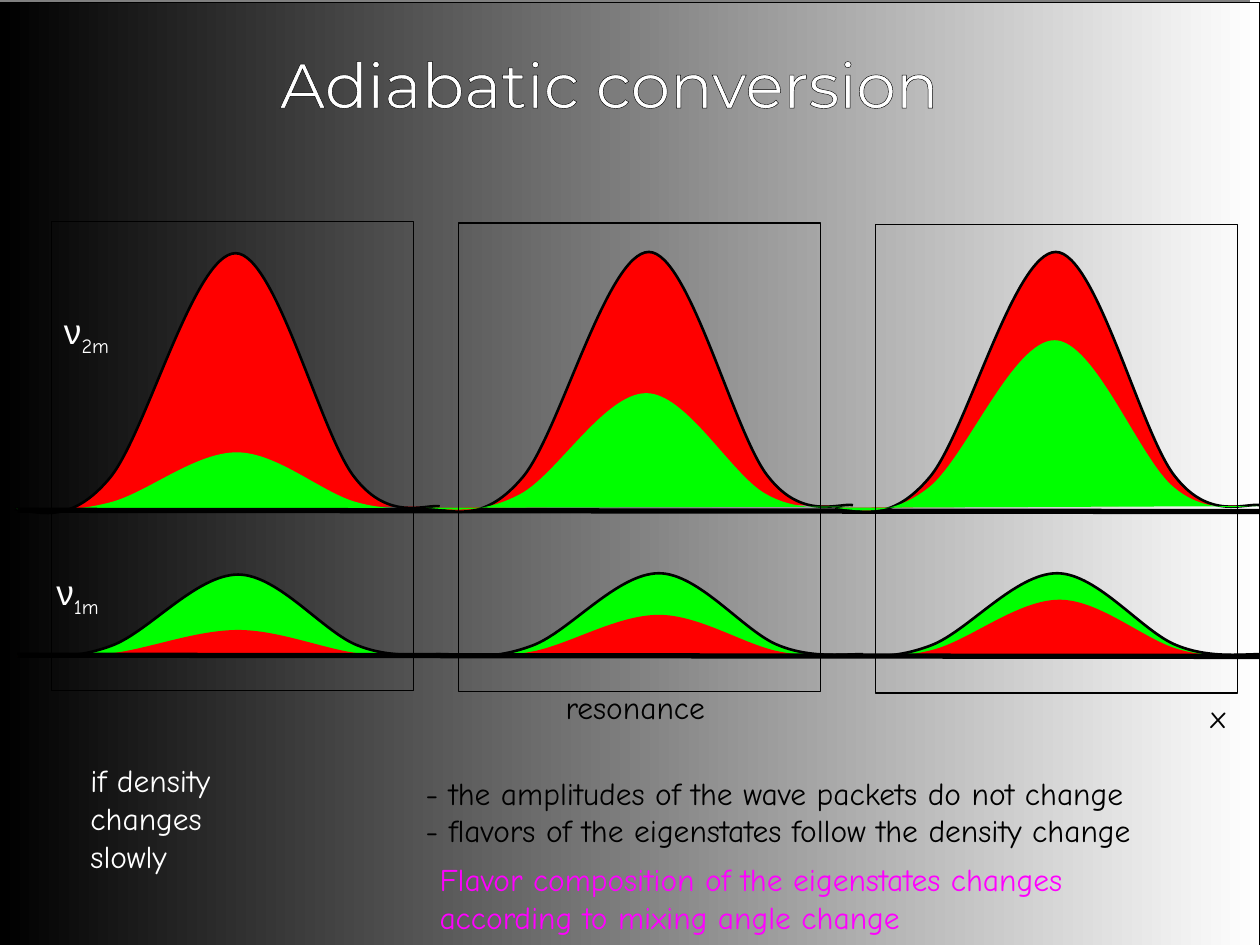
import pptx
import pptx.dml.color
import pptx.enum.shapes
import pptx.enum.text
import pptx.util
from lxml import etree
from pptx.oxml.ns import qn

Inches = pptx.util.Inches
Pt = pptx.util.Pt
RGBColor = pptx.dml.color.RGBColor

BLACK = RGBColor(0x00, 0x00, 0x00)
WHITE = RGBColor(0xFF, 0xFF, 0xFF)
GRAY = RGBColor(0x80, 0x80, 0x80)
RED = RGBColor(0xFF, 0x00, 0x00)
GREEN = RGBColor(0x00, 0xFF, 0x00)
MAGENTA = RGBColor(0xFF, 0x00, 0xFF)
BODY_FONT = "Comic Neue"

# Bezier points of a wave packet: inches from its left, depth below its peak (1 = base)
PACKET = [(0, 1), (0.23, 1.02), (0.46, 1.05), (0.75, 0.88),
          (1.04, 0.71), (1.42, 0), (1.75, 0),
          (2.07, 0), (2.43, 0.72), (2.7, 0.88),
          (2.97, 1.05), (3.26, 0.98), (3.37, 0.99)]

# left, peak, base, colour, outlined
UPPER_PACKETS = [
    (0.12, 2.01, 4.04, RED, True), (0.13, 3.59, 4.04, GREEN, False),
    (3.4, 2, 4.03, RED, True), (6.63, 2, 4.03, RED, True),
    (3.38, 3.12, 4.03, GREEN, False), (6.62, 2.7, 4.03, GREEN, False),
]
LOWER_PACKETS = [
    (0.14, 4.56, 5.2, GREEN, True), (0.14, 5, 5.21, RED, False),
    (3.48, 4.55, 5.2, GREEN, True), (6.64, 4.55, 5.2, GREEN, True),
    (3.48, 4.88, 5.21, RED, False), (6.66, 4.76, 5.21, RED, False),
]
FRAMES = [(0.41, 1.76), (3.64, 1.77), (6.95, 1.78)]


def set_line(shape, width):
    shape.line.color.rgb = BLACK
    shape.line.width = Pt(width)


def bend_segments(shape):
    """Turn each three straight segments of a freeform into one cubic curve."""
    segments = list(shape._element.iter(qn("a:lnTo")))
    for start in range(0, len(segments), 3):
        curve = etree.Element(qn("a:cubicBezTo"))
        segments[start].addprevious(curve)
        for segment in segments[start:start + 3]:
            curve.append(segment[0])
            segment.getparent().remove(segment)


def add_packet(slide, left, peak, base, color, outlined):
    points = [(Inches(left + x), Inches(peak + depth * (base - peak)))
              for x, depth in PACKET]
    builder = slide.shapes.build_freeform(*points[0])
    builder.add_line_segments(points[1:], close=False)
    shape = builder.convert_to_shape()
    bend_segments(shape)
    shape.shadow.inherit = False
    shape.fill.solid()
    shape.fill.fore_color.rgb = color
    if outlined:
        set_line(shape, 1.5)
    else:
        shape.line.fill.background()


def add_axis(slide, y):
    line = slide.shapes.add_connector(
        pptx.enum.shapes.MSO_CONNECTOR.STRAIGHT,
        Inches(0.14), Inches(y), Inches(10.03), Inches(y + 0.01))
    set_line(line, 3)
    etree.SubElement(line._element.spPr, qn("a:effectLst"))


def add_rectangle(slide, left, top, width, height):
    shape = slide.shapes.add_shape(
        pptx.enum.shapes.MSO_SHAPE.RECTANGLE,
        Inches(left), Inches(top), Inches(width), Inches(height))
    shape.shadow.inherit = False
    shape.fill.background()
    set_line(shape, 0.75)
    return shape


def add_background(slide):
    shape = add_rectangle(slide, 0, 0.02, 10, 7.5)
    shape.fill.gradient()
    shape.fill.gradient_angle = 0
    for stop, position, color in zip(shape.fill.gradient_stops, (0, 1), (BLACK, WHITE)):
        stop.position = position
        stop.color.rgb = color
    effects = shape._element.spPr.find(qn("a:effectLst"))
    shadow = etree.SubElement(effects, qn("a:outerShdw"), dist=str(Pt(8.5)),
                              dir=str(225 * 60000), algn="ctr", rotWithShape="0")
    etree.SubElement(shadow, qn("a:srgbClr"), val=str(GRAY))


def add_run(paragraph, text, size, color, font=BODY_FONT):
    run = paragraph.add_run()
    run.text = text
    run.font.size = Pt(size)
    run.font.name = font
    run.font.color.rgb = color
    return run


def add_frame(slide, left, top, width, height, wrap=False):
    box = slide.shapes.add_textbox(Inches(left), Inches(top), Inches(width), Inches(height))
    box.text_frame.word_wrap = wrap
    return box.text_frame


def add_text(slide, left, top, width, height, lines, color=BLACK, wrap=False):
    frame = add_frame(slide, left, top, width, height, wrap)
    for index, line in enumerate(lines):
        paragraph = frame.add_paragraph() if index else frame.paragraphs[0]
        add_run(paragraph, line, 18, color)


def add_title(slide):
    paragraph = add_frame(slide, 0.59, 0.31, 8.49, 1.16).paragraphs[0]
    paragraph.alignment = pptx.enum.text.PP_ALIGN.CENTER
    run = add_run(paragraph, "Adiabatic conversion", 36, WHITE, "Montserrat")
    outline = etree.Element(qn("a:ln"), w=str(Pt(0.75)))
    fill = etree.SubElement(outline, qn("a:solidFill"))
    etree.SubElement(fill, qn("a:srgbClr"), val=str(BLACK))
    run._r.get_or_add_rPr().insert(0, outline)


def add_eigenstate(slide, left, top, width, subscript):
    paragraph = add_frame(slide, left, top, width, 0.43).paragraphs[0]
    add_run(paragraph, "ν", 20, WHITE, "Arial")
    run = add_run(paragraph, subscript, 20, WHITE)
    run._r.get_or_add_rPr().set("baseline", "-25000")


def main():
    presentation = pptx.Presentation()
    presentation.slide_width = Inches(10)
    presentation.slide_height = Inches(7.5)
    slide = presentation.slides.add_slide(presentation.slide_layouts[6])

    add_background(slide)
    add_title(slide)
    add_packet(slide, *UPPER_PACKETS[0])
    add_eigenstate(slide, 0.41, 2.41, 0.6, "2m")
    add_text(slide, 9.51, 5.48, 0.35, 0.4, ["x"])
    add_eigenstate(slide, 0.35, 4.48, 0.57, "1m")
    add_packet(slide, *UPPER_PACKETS[1])
    add_axis(slide, 4.05)
    for packet in LOWER_PACKETS[:2] + UPPER_PACKETS[2:] + LOWER_PACKETS[2:]:
        add_packet(slide, *packet)
    add_axis(slide, 5.2)

    add_text(slide, 4.39, 5.41, 1.37, 0.4, ["resonance"])
    add_text(slide, 0.62, 5.99, 1.4, 1, ["if density", "changes", "slowly"], WHITE)
    add_text(slide, 3.28, 6.09, 6.56, 0.7,
             ["- the amplitudes of the wave packets do not change",
              "- flavors of the eigenstates follow the density change"])
    for left, top in FRAMES:
        add_rectangle(slide, left, top, 2.87, 3.72)
    add_text(slide, 3.39, 6.78, 6.23, 0.71,
             ["Flavor composition of the eigenstates changes according to mixing angle change"],
             MAGENTA, wrap=True)
    presentation.save("out.pptx")


if __name__ == "__main__":
    main()
